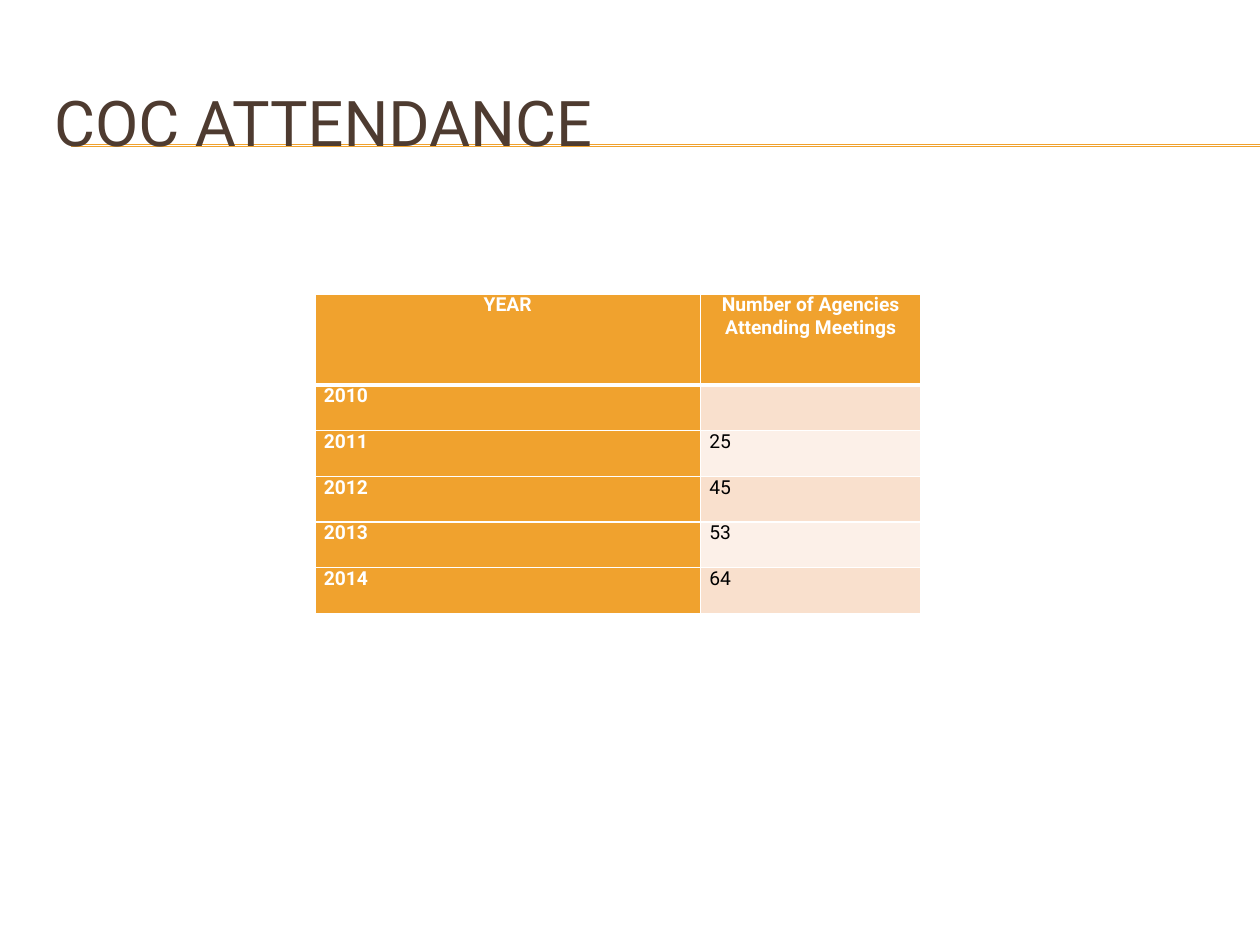
import pptx
import pptx.dml.color
import pptx.enum.shapes
import pptx.enum.text
import pptx.oxml
import pptx.oxml.ns
import pptx.util
from lxml import etree

ORANGE, BROWN, WHITE, BLACK = "F0A22E", "4E3B30", "FFFFFF", "000000"
BANDS = ("F9E0CD", "FCF0E8")
ATTENDANCE = [("2010", ""), ("2011", "25"), ("2012", "45"), ("2013", "53"), ("2014", "64")]


def colour(value):
    return pptx.dml.color.RGBColor.from_string(value)


class SlideBuilder:
    """Hold the style and the current slide, with lengths as shares of its size."""

    font = "Roboto"

    def __init__(self, deck):
        self.width, self.height = deck.slide_width, deck.slide_height
        self.page = deck.slides.add_slide(deck.slide_layouts[5])

    def across(self, share):
        return round(self.width * share / 100)

    def down(self, share):
        return round(self.height * share / 100)

    def add_span(self, para, text, size, ink, bold=False):
        span = para.add_run()
        span.text = text
        span.font.name = self.font
        span.font.size = pptx.util.Pt(size)
        span.font.bold = bold
        span.font.color.rgb = colour(ink)

    def rule(self, left, right, top):
        line = self.page.shapes.add_connector(
            pptx.enum.shapes.MSO_CONNECTOR.STRAIGHT,
            self.across(left), self.down(top), self.across(right), self.down(top))
        line.line.color.rgb = colour(ORANGE)
        line.line.width = pptx.util.Pt(0.75)
        etree.SubElement(line.element.spPr, pptx.oxml.ns.qn("a:effectLst"))

    def title(self, text, left, top, width, height):
        box = self.page.shapes.title
        box.left, box.top = self.across(left), self.down(top)
        box.width, box.height = self.across(width), self.down(height)
        box.text_frame.vertical_anchor = pptx.enum.text.MSO_ANCHOR.MIDDLE
        para = box.text_frame.paragraphs[0]
        para.alignment = pptx.enum.text.PP_ALIGN.LEFT
        self.add_span(para, text, 36, BROWN)
        self.page.shapes.element.append(box.element)

    def borders(self, cell, bottom):
        properties = cell._tc.get_or_add_tcPr()
        for position, (side, points) in enumerate(zip("LRTB", (1, 1, 1, bottom))):
            edge = pptx.oxml.parse_xml(
                f'<a:ln{side} {pptx.oxml.ns.nsdecls("a")} w="{pptx.util.Pt(points)}">'
                f'<a:solidFill><a:srgbClr val="{WHITE}"/></a:solidFill></a:ln{side}>')
            properties.insert(position, edge)

    def cell(self, cell, text, fill, ink, bold, heading):
        cell.margin_left = cell.margin_right = pptx.util.Inches(0.07)
        cell.margin_top = cell.margin_bottom = 0
        cell.fill.solid()
        cell.fill.fore_color.rgb = colour(fill)
        self.borders(cell, 3 if heading else 1)
        para = cell.text_frame.paragraphs[0]
        if heading:
            para.alignment = pptx.enum.text.PP_ALIGN.CENTER
        if text:
            self.add_span(para, text, 11, ink, bold)

    def table(self, rows, left, top, columns, heights):
        grid = self.page.shapes.add_table(
            len(rows), len(columns), self.across(left), self.down(top),
            self.across(sum(columns)), self.down(sum(heights))).table
        for column, share in zip(grid.columns, columns):
            column.width = self.across(share)
        for row, share in zip(grid.rows, heights):
            row.height = self.down(share)
        for y, values in enumerate(rows):
            for x, text in enumerate(values):
                strong = x == 0 or y == 0
                fill = ORANGE if strong else BANDS[(y - 1) % 2]
                self.cell(grid.cell(y, x), text, fill, WHITE if strong else BLACK, strong, y == 0)


def main():
    deck = pptx.Presentation()
    deck.slide_width, deck.slide_height = pptx.util.Inches(10), pptx.util.Inches(7.5)
    slide = SlideBuilder(deck)
    for top in (15.33, 15.47):
        slide.rule(5.6, 100, top)
    slide.title("COC ATTENDANCE", 3.3, 6.67, 95, 12.27)
    header = ("YEAR", "Number of Agencies Attending Meetings")
    slide.table([header, *ATTENDANCE], 25, 31.1, (30.6, 17.5), [9.65] + [4.83] * len(ATTENDANCE))
    deck.save("out.pptx")


if __name__ == "__main__":
    main()
